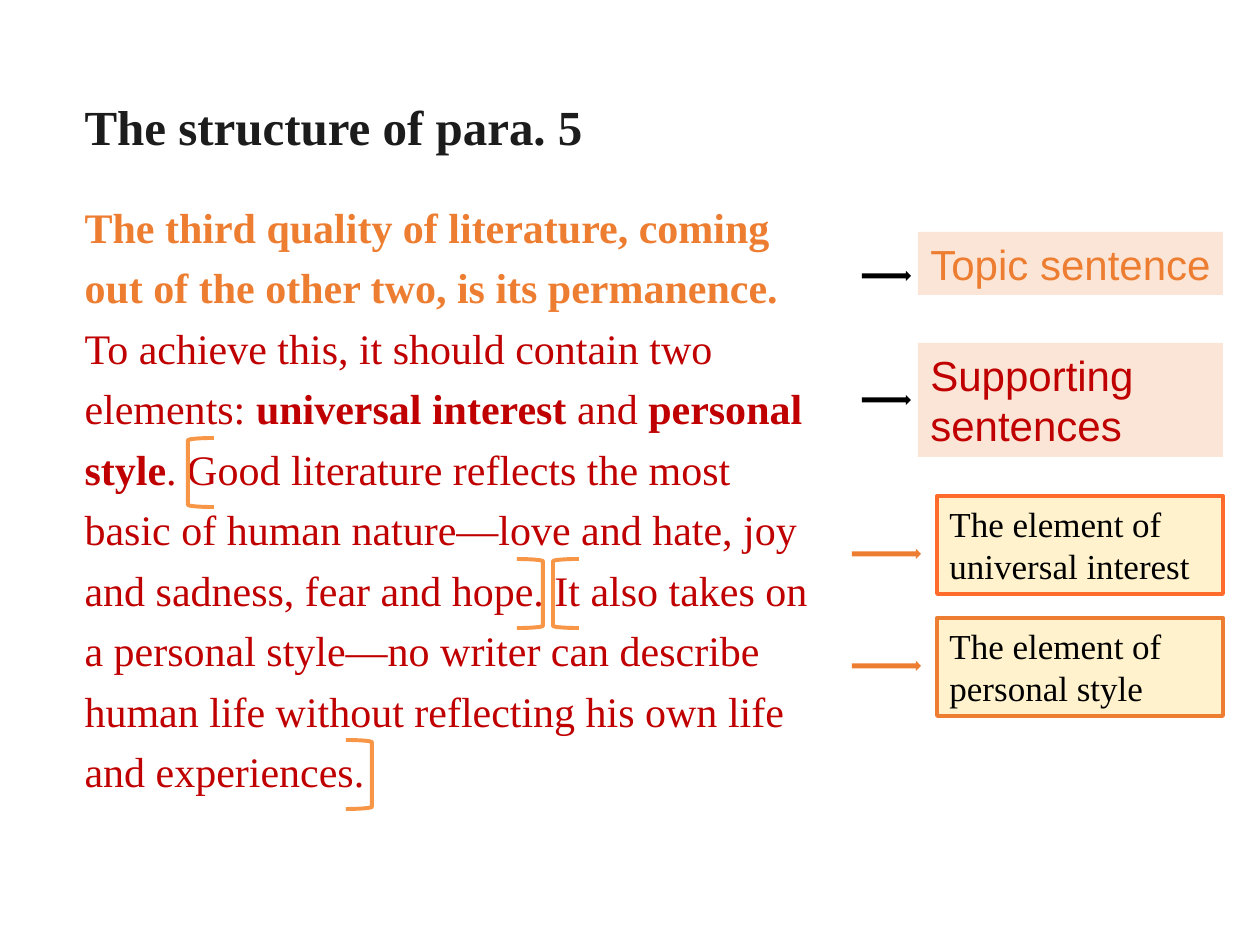
import pptx
import pptx.util
import pptx.dml.color
import pptx.enum.shapes
import pptx.enum.text
import lxml.etree

KIND = pptx.enum.shapes.MSO_SHAPE
SERIF = "Times New Roman"
ORANGE, RED, BLACK = "ED7D31", "C00000", "000000"


def px(n):
    """Turn pixels into EMU."""
    return pptx.util.Emu(round(n * 914400 / 126))


def rgb(code):
    """Turn a hex string into a colour."""
    return pptx.dml.color.RGBColor.from_string(code)


def place(item, box):
    """Move an item to a box of left, top, width and height."""
    item.left, item.top, item.width, item.height = map(px, box)


def write(para, text, size=24, face=SERIF, color=BLACK, bold=False):
    """Add a formatted run to a paragraph."""
    run = para.add_run()
    run.text = text
    font = run.font
    font.size, font.name, font.bold = pptx.util.Pt(size), face, bold
    font.color.rgb = rgb(color)


def setup(frame, wrap=True):
    """Set a text frame to start at the top left at a fixed size."""
    frame.word_wrap = wrap
    frame.auto_size = pptx.enum.text.MSO_AUTO_SIZE.NONE
    frame.vertical_anchor = pptx.enum.text.MSO_ANCHOR.TOP


def align(para, space=1.0):
    """Set a paragraph flush left, with no bullet or gap before it."""
    props = para._p.get_or_add_pPr()
    props.set("marL", "0")
    props.set("indent", "0")
    lxml.etree.SubElement(props, pptx.oxml.ns.qn("a:buNone"))
    para.alignment = pptx.enum.text.PP_ALIGN.LEFT
    para.line_spacing = space
    para.space_before = pptx.util.Pt(0)


def draw(slide, kind, box, fill=None, line=None):
    """Add a flat preset shape."""
    shape = slide.shapes.add_shape(kind, *map(px, box))
    shape.shadow.inherit = False
    if fill:
        shape.fill.solid()
        shape.fill.fore_color.rgb = rgb(fill)
    else:
        shape.fill.background()
    if line:
        shape.line.color.rgb = rgb(line)
        shape.line.width = pptx.util.Pt(2.25)
    else:
        shape.line.fill.background()
    return shape


def head(slide, box):
    """Fill the title."""
    title = slide.shapes.title
    place(title, box)
    setup(title.text_frame)
    para = title.text_frame.paragraphs[0]
    align(para)
    write(para, "The structure of para. 5", size=28, color="1C1C1C", bold=True)


def passage(slide, box):
    """Fill the body with the passage and bracket its two elements."""
    body = slide.placeholders[1]
    place(body, box)
    frame = body.text_frame
    setup(frame)
    para = frame.paragraphs[0]
    align(para, 1.2)
    write(para, "The third quality of literature, coming out of the other two, "
          "is its permanence. ", color=ORANGE, bold=True)
    parts = [
        "To achieve this, it should contain two elements: ",
        "universal interest", " and ", "personal style",
        ". Good literature reflects the most basic of human nature—love and "
        "hate, joy and sadness, fear and hope. It also takes on a personal "
        "style—no writer can describe",
    ]
    for i, text in enumerate(parts):
        write(para, text, color=RED, bold=i % 2 == 1)
    para = frame.add_paragraph()
    align(para, 1.2)
    write(para, "human life without reflecting his own life and experiences.",
          color=RED)
    left, top = box[:2]
    marks = [(KIND.LEFT_BRACKET, 116, 253), (KIND.RIGHT_BRACKET, 445, 374),
             (KIND.LEFT_BRACKET, 481, 374), (KIND.RIGHT_BRACKET, 274, 555)]
    for kind, x, y in marks:
        draw(slide, kind, (left + x, top + y, 26, 69), line="F79646")


def label(slide, box, text, arrow, fill, line=None, wrap=True, **form):
    """Add a filled label and the arrow that points at it."""
    shape = draw(slide, KIND.RECTANGLE, box, fill, line)
    setup(shape.text_frame, wrap)
    para = shape.text_frame.paragraphs[0]
    para.alignment = pptx.enum.text.PP_ALIGN.LEFT
    write(para, text, **form)
    x, y, wide, color = arrow
    draw(slide, KIND.RIGHT_ARROW, (box[0] + x, box[1] + y, wide, 10), color)


def notes(slide, box):
    """Add the column of labels beside the passage."""
    left, top, wide = box[:3]
    rows = [("Topic sentence", 0, 63, 39, ORANGE, False),
            ("Supporting sentences", 111, 114, 52, RED, True)]
    for text, y, high, shift, color, wrap in rows:
        label(slide, (left, top + y, wide, high), text,
              (-56, shift, 49, BLACK), "FBE5D6", wrap=wrap,
              face="Arial", color=color)
    rows = [("universal interest", 264, 53, "FF6B2B"),
            ("personal style", 386, 43, ORANGE)]
    for text, y, shift, line in rows:
        label(slide, (left + 19, top + y, wide - 19, 98),
              "The element of " + text, (-85, shift, 69, ORANGE),
              "FFF2CC", line, size=20)


def main():
    """Build and save the slide."""
    deck = pptx.Presentation()
    deck.slide_width, deck.slide_height = px(1260), px(945)
    slide = deck.slides.add_slide(deck.slide_layouts[1])
    head(slide, (72, 90, 1004, 72))
    passage(slide, (72, 185, 760, 624))
    notes(slide, (918, 232, 305, 484))
    deck.save("out.pptx")


if __name__ == "__main__":
    main()
